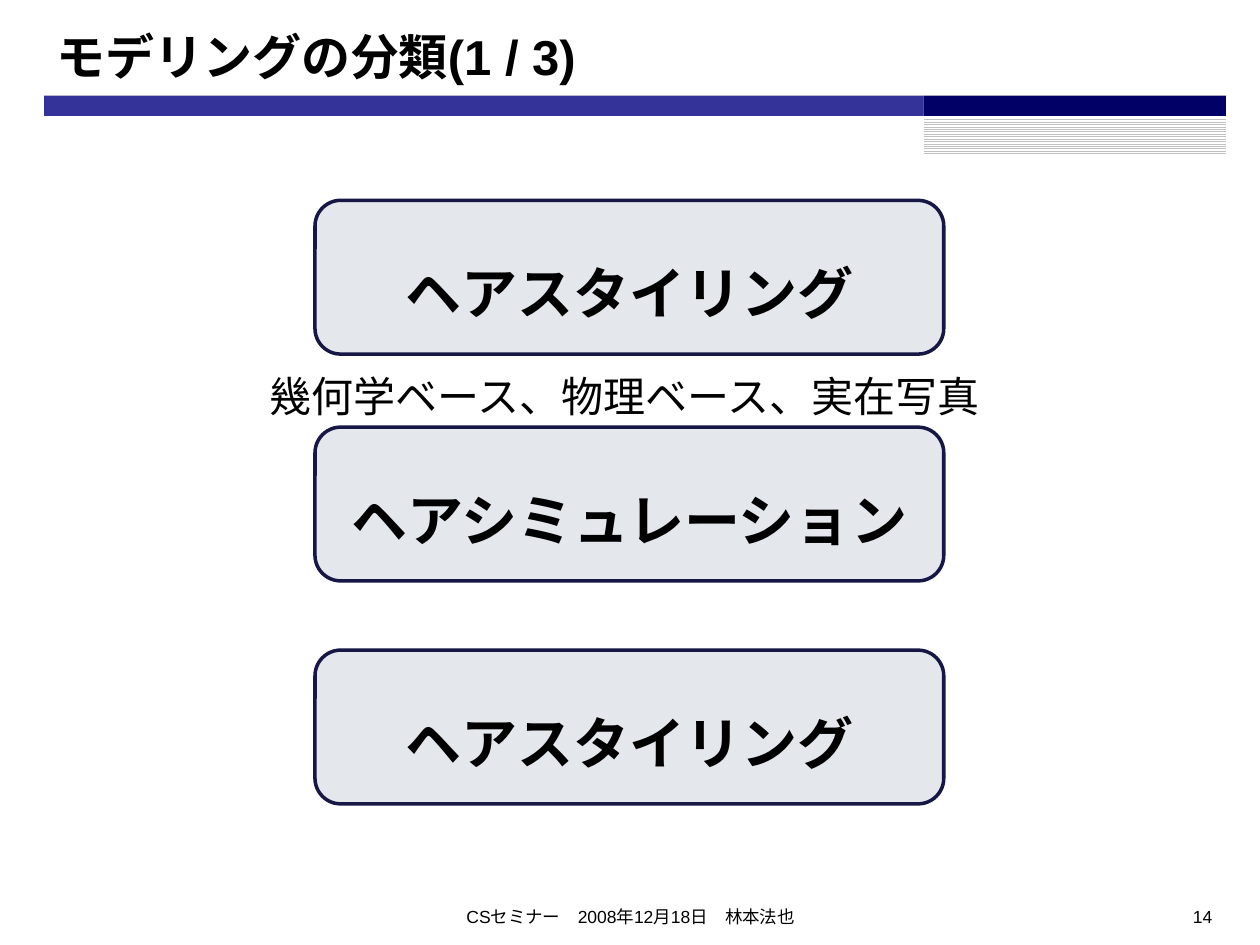
import pptx
import pptx.util
import pptx.dml.color
import pptx.enum.dml
import pptx.enum.shapes
import pptx.enum.text

Inches = pptx.util.Inches
Pt = pptx.util.Pt
Shape = pptx.enum.shapes.MSO_SHAPE
Align = pptx.enum.text.PP_ALIGN
Anchor = pptx.enum.text.MSO_ANCHOR


def color(value):
    return pptx.dml.color.RGBColor.from_string(value)


def write(box, text, size, align, bold=False, anchor=Anchor.TOP, wrap=True):
    frame = box.text_frame
    frame.word_wrap = wrap
    frame.vertical_anchor = anchor
    para = frame.paragraphs[0]
    para.text = text
    para.alignment = align
    para.font.name = "Arial"
    para.font.size = Pt(size)
    para.font.bold = bold
    para.font.color.rgb = color("000000")
    return para


deck = pptx.Presentation()
deck.slide_width = Inches(10)
deck.slide_height = Inches(7.5)
page = deck.slides.add_slide(deck.slide_layouts[6])

split, bar_top, bar_height = 7.33, 0.76, 0.16
bands = [
    (0.35, bar_top, split - 0.35, bar_height, "333399"),
    (split, 0.93, 2.4, 0.3, None),
    (split, bar_top, 2.4, bar_height, "000066"),
]
for left, top, width, height, fill in bands:
    band = page.shapes.add_shape(
        Shape.RECTANGLE, Inches(left), Inches(top), Inches(width), Inches(height))
    band.shadow.inherit = False
    band.line.fill.background()
    if fill:
        band.fill.solid()
        band.fill.fore_color.rgb = color(fill)
    else:
        band.fill.patterned()
        band.fill.pattern = pptx.enum.dml.MSO_PATTERN.LIGHT_HORIZONTAL
        band.fill.fore_color.rgb = color("C0C0C0")
        band.fill.back_color.rgb = color("FFFFFF")

title = page.shapes.add_textbox(Inches(0.35), Inches(0.13), Inches(9.38), Inches(0.63))
write(title, "モデリングの分類(1 / 3)", 28, Align.LEFT, bold=True, anchor=Anchor.MIDDLE)

footer = page.shapes.add_textbox(Inches(3.42), Inches(7.14), Inches(3.17), Inches(0.29))
write(footer, "CSセミナー　2008年12月18日　林本法也", 10, Align.CENTER)

number = page.shapes.add_textbox(Inches(7.39), Inches(7.14), Inches(2.33), Inches(0.29))
write(number, "14", 10, Align.RIGHT)

categories = [
    (1.59, "ヘアスタイリング"),
    (3.39, "ヘアシミュレーション"),
    (5.16, "ヘアスタイリング"),
]
for top, name in categories:
    box = page.shapes.add_shape(
        Shape.ROUNDED_RECTANGLE, Inches(2.5), Inches(top), Inches(4.99), Inches(1.22))
    box.shadow.inherit = False
    box.fill.solid()
    box.fill.fore_color.rgb = color("E4E8EC")
    box.line.color.rgb = color("171745")
    box.line.width = Pt(2)
    box.text_frame.margin_bottom = Inches(0.08)
    para = write(box, name, 32, Align.CENTER, bold=True, anchor=Anchor.MIDDLE)
    para.line_spacing = 1.5

caption = page.shapes.add_textbox(Inches(2.04), Inches(2.89), Inches(5.92), Inches(0.5))
write(caption, "幾何学ベース、物理ベース、実在写真", 24, Align.LEFT, wrap=False)
caption.text_frame.auto_size = pptx.enum.text.MSO_AUTO_SIZE.SHAPE_TO_FIT_TEXT

deck.save("out.pptx")
